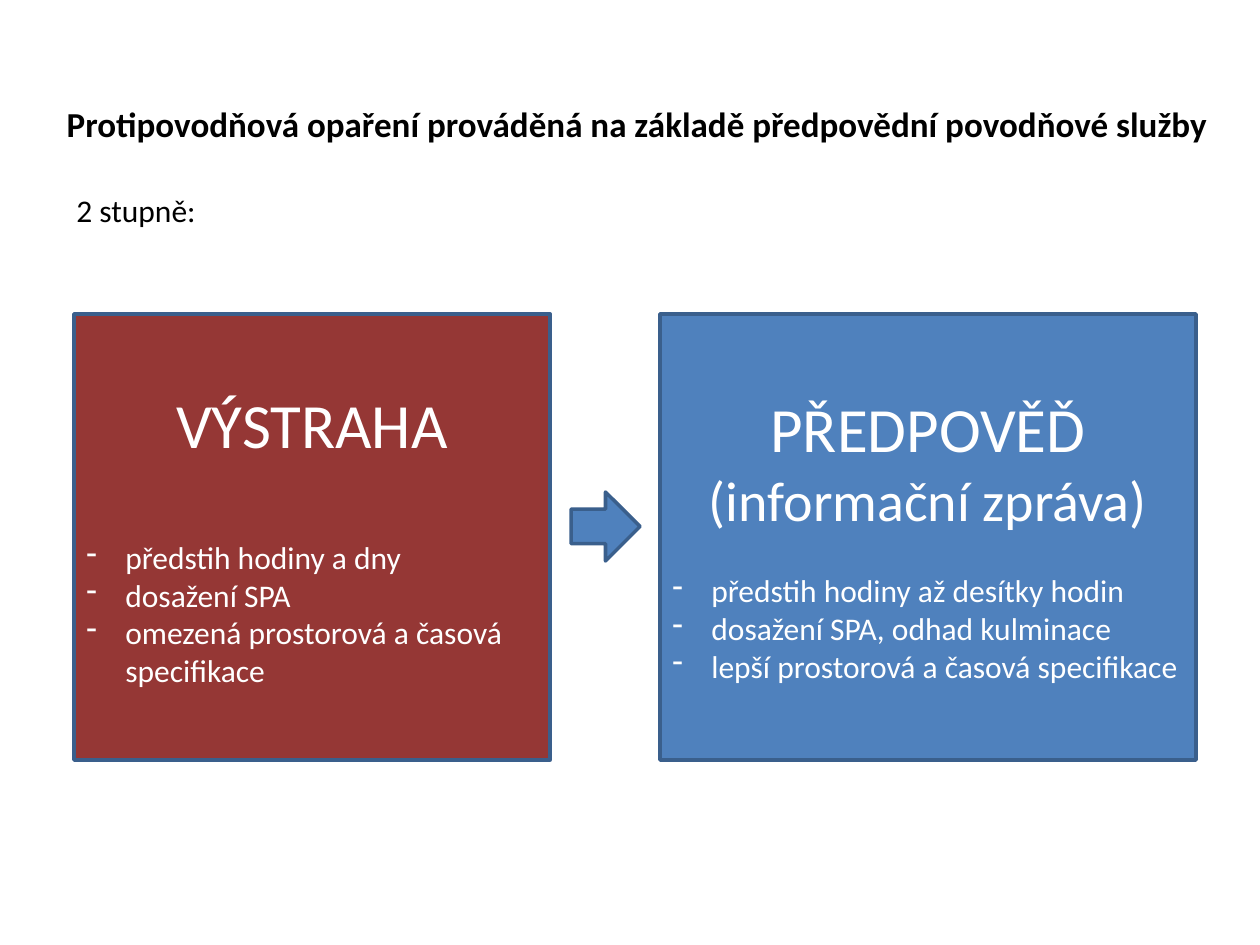
from lxml import etree
from pptx import Presentation
from pptx import util as u
from pptx.dml.color import RGBColor
from pptx.enum import shapes, text
from pptx.oxml.ns import qn

PX_PER_INCH = 126
COLORS = {"ink": "000000", "light": "FFFFFF", "warning": "953735",
          "forecast": "4F81BD", "outline": "3A5F8C"}


def px(length):
    return u.Emu(round(length * u.Inches(1) / PX_PER_INCH))


class SlideBuilder:
    font = "Calibri"
    item_size = 18
    item_indent = 39

    def __init__(self, slide):
        self.slide = slide

    def format_runs(self, para, size, color, bold=False):
        for span in para.runs:
            span.font.name = self.font
            span.font.size = u.Pt(size)
            span.font.bold = bold
            span.font.color.rgb = RGBColor.from_string(COLORS[color])

    def title(self, wording, left, top, width, height):
        box = self.slide.shapes.title
        box.left, box.top, box.width, box.height = map(px, (left, top, width, height))
        self.single_line(box.text_frame, wording, 20, bold=True)

    def label(self, wording, left, top, width, height):
        box = self.slide.shapes.add_textbox(*map(px, (left, top, width, height)))
        self.single_line(box.text_frame, wording, self.item_size)

    def single_line(self, frame, wording, size, bold=False):
        frame.text = wording
        frame.word_wrap = False
        frame.auto_size = text.MSO_AUTO_SIZE.NONE
        frame.vertical_anchor = text.MSO_ANCHOR.TOP
        frame.paragraphs[0].alignment = text.PP_ALIGN.LEFT
        self.format_runs(frame.paragraphs[0], size, "ink", bold)

    def shape(self, kind, fill, left, top, width, height):
        shape = self.slide.shapes.add_shape(kind, *map(px, (left, top, width, height)))
        shape.shadow.inherit = False
        shape.fill.solid()
        shape.fill.fore_color.rgb = RGBColor.from_string(COLORS[fill])
        shape.line.color.rgb = RGBColor.from_string(COLORS["outline"])
        shape.line.width = u.Pt(2)
        return shape

    def stage(self, fill, position, headings, items, gap):
        """Box with (wording, size) headings and, gap points below, a dashed list."""
        box = self.shape(shapes.MSO_SHAPE.RECTANGLE, fill, *position)
        frame = box.text_frame
        frame.word_wrap = True
        frame.vertical_anchor = text.MSO_ANCHOR.MIDDLE
        frame.text = "\n".join([wording for wording, _ in headings] + items)
        heading_paras = frame.paragraphs[:len(headings)]
        item_paras = frame.paragraphs[len(headings):]
        for para, (_, size) in zip(heading_paras, headings):
            para.alignment = text.PP_ALIGN.CENTER
            self.format_runs(para, size, "light")
        item_paras[0].space_before = u.Pt(gap)
        for para in item_paras:
            para.alignment = text.PP_ALIGN.LEFT
            self.format_runs(para, self.item_size, "light")
            self.dash(para)

    def dash(self, para):
        properties = para._p.get_or_add_pPr()
        properties.set("marL", str(px(self.item_indent)))
        properties.set("indent", str(-px(self.item_indent)))
        etree.SubElement(properties, qn("a:buFontTx"))
        etree.SubElement(properties, qn("a:buChar")).set("char", "-")


def main():
    deck = Presentation()
    deck.slide_width, deck.slide_height = u.Inches(10), u.Inches(7.5)
    builder = SlideBuilder(deck.slides.add_slide(deck.slide_layouts[5]))

    builder.title("Protipovodňová opaření prováděná na základě předpovědní povodňové služby",
                  54, 96, 1177, 55)
    builder.label("2 stupně:", 64, 185, 147, 50)
    builder.stage("warning", (74, 314, 476, 446),
                  [("VÝSTRAHA", 36)],
                  ["předstih hodiny a dny", "dosažení SPA",
                   "omezená prostorová a časová specifikace"], gap=44)
    builder.stage("forecast", (660, 314, 536, 446),
                  [("PŘEDPOVĚĎ", 36), ("(informační zpráva)", 32)],
                  ["předstih hodiny až desítky hodin", "dosažení SPA, odhad kulminace",
                   "lepší prostorová a časová specifikace"], gap=22)
    builder.shape(shapes.MSO_SHAPE.RIGHT_ARROW, "forecast", 571, 492, 69, 69)
    deck.save("out.pptx")


if __name__ == "__main__":
    main()
